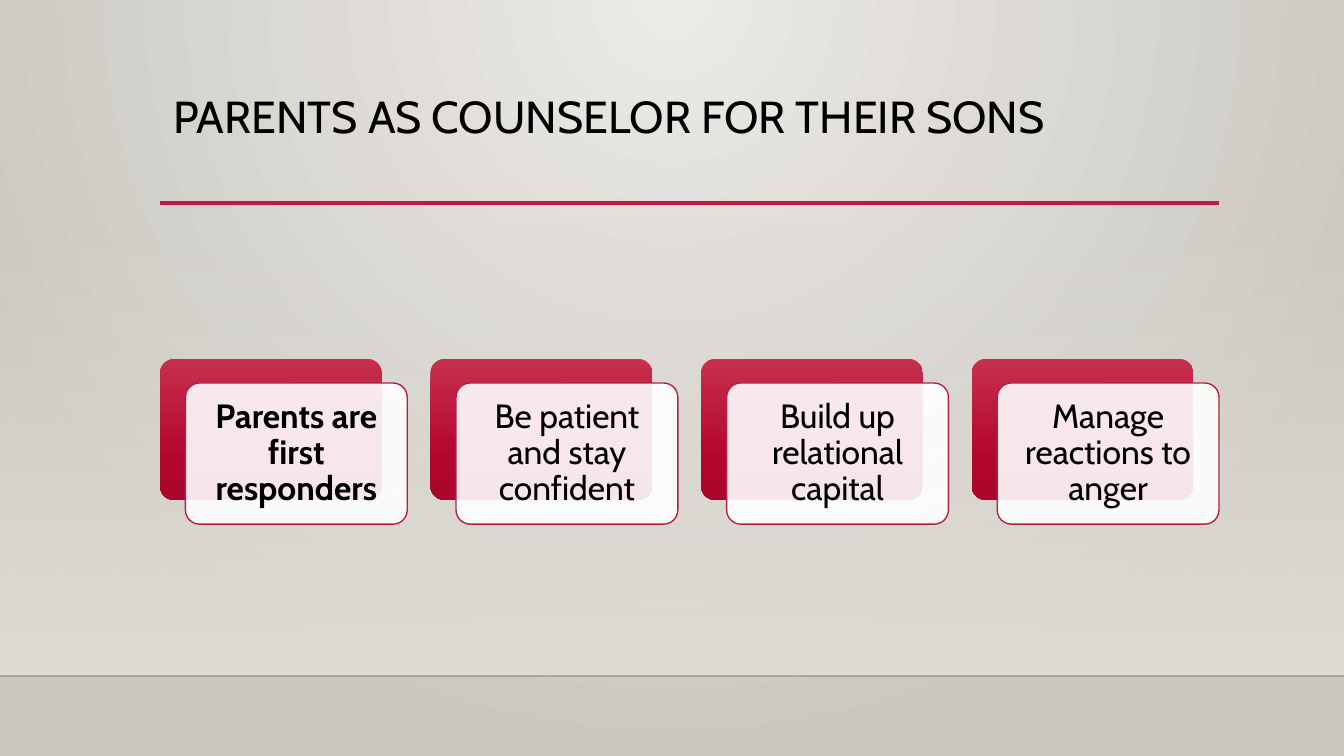
"""Build the slide on parents as counselors, with four overlapping cards."""
from dataclasses import dataclass

from lxml.etree import SubElement
from pptx import Presentation
from pptx.dml.color import RGBColor
from pptx.enum.shapes import MSO_CONNECTOR, MSO_SHAPE
from pptx.enum.text import MSO_ANCHOR, PP_ALIGN
from pptx.oxml.ns import qn
from pptx.util import Inches, Pt

FONT = "Cabin"
BLACK = RGBColor(0x00, 0x00, 0x00)
WHITE = RGBColor(0xFF, 0xFF, 0xFF)
CRIMSON = RGBColor(0xB7, 0x1E, 0x42)
CRIMSON_LIGHT = RGBColor(0xC7, 0x30, 0x4C)
CRIMSON_DEEP = RGBColor(0xB3, 0x06, 0x2F)
CRIMSON_DARK = RGBColor(0xAA, 0x06, 0x2C)
SAND = RGBColor(0xDF, 0xDB, 0xD5)
SAND_LIGHT = RGBColor(0xEC, 0xEA, 0xE7)
SAND_DARK = RGBColor(0xCA, 0xC7, 0xC1)

LEFT, CONTENT_WIDTH = 1.19, 7.88
WALL_TOP, FLOOR_TOP = 1.66, 5.03
CARD_TOP, CARD_WIDTH, CARD_HEIGHT = 2.67, 1.65, 1.05
SHIFT_RIGHT, SHIFT_DOWN = 0.19, 0.18


@dataclass(frozen=True)
class Stop:
    percent: int
    color: RGBColor
    alpha: int = 100


@dataclass(frozen=True)
class Card:
    message: str
    bold: bool = False


CRIMSON_STOPS = [Stop(0, CRIMSON_LIGHT), Stop(69, CRIMSON_DEEP), Stop(100, CRIMSON_DARK)]
CARDS = [
    Card("Parents are first responders", bold=True),
    Card("Be patient and stay confident"),
    Card("Build up relational capital"),
    Card("Manage reactions to anger"),
]
CARD_STEP = (CONTENT_WIDTH - CARD_WIDTH - SHIFT_RIGHT) / (len(CARDS) - 1)


def set_alpha(color_element, percent: int) -> None:
    SubElement(color_element, qn("a:alpha"), val=str(percent * 1000))


def fill_gradient(fill, element, stops: list[Stop], circular: bool = False) -> None:
    fill.gradient()
    gradient = next(element.iter(qn("a:gradFill")))
    for child in list(gradient):
        gradient.remove(child)
    stop_list = SubElement(gradient, qn("a:gsLst"))
    for stop in stops:
        entry = SubElement(stop_list, qn("a:gs"), pos=str(stop.percent * 1000))
        color = SubElement(entry, qn("a:srgbClr"), val=str(stop.color))
        if stop.alpha < 100:
            set_alpha(color, stop.alpha)
    if circular:
        center = SubElement(gradient, qn("a:path"), path="circle")
        SubElement(center, qn("a:fillToRect"), l="43000", t="0", r="43000", b="100000")
    else:
        SubElement(gradient, qn("a:lin"), ang="5400000", scaled="0")


def add_rule(slide, left: float, top: float, width: float, color: RGBColor,
             weight: float, alpha: int = 100) -> None:
    rule = slide.shapes.add_connector(
        MSO_CONNECTOR.STRAIGHT, Inches(left), Inches(top), Inches(left + width), Inches(top))
    rule.line.color.rgb = color
    rule.line.width = Pt(weight)
    if alpha < 100:
        set_alpha(next(rule.element.iter(qn("a:srgbClr"))), alpha)
    SubElement(rule.element.spPr, qn("a:effectLst"))


def add_panel(slide, kind: MSO_SHAPE, left: float, top: float, width: float, height: float):
    panel = slide.shapes.add_shape(
        kind, Inches(left), Inches(top), Inches(width), Inches(height))
    panel.shadow.inherit = False
    panel.line.fill.background()
    if kind == MSO_SHAPE.ROUNDED_RECTANGLE:
        panel.adjustments[0] = 0.1
    return panel


def write(frame, wording: str, size: int, align: PP_ALIGN, bold: bool = False) -> None:
    frame.word_wrap = True
    frame.text = wording
    paragraph = frame.paragraphs[0]
    paragraph.alignment = align
    paragraph.line_spacing = 0.9
    font = paragraph.runs[0].font
    font.name, font.size, font.bold = FONT, Pt(size), bold
    font.color.rgb = BLACK


def add_card(slide, card: Card, left: float) -> None:
    backing = add_panel(slide, MSO_SHAPE.ROUNDED_RECTANGLE,
                        left, CARD_TOP, CARD_WIDTH, CARD_HEIGHT)
    fill_gradient(backing.fill, backing.element, CRIMSON_STOPS)
    front = add_panel(slide, MSO_SHAPE.ROUNDED_RECTANGLE, left + SHIFT_RIGHT,
                      CARD_TOP + SHIFT_DOWN, CARD_WIDTH, CARD_HEIGHT)
    front.fill.solid()
    front.fill.fore_color.rgb = WHITE
    set_alpha(next(front.element.iter(qn("a:srgbClr"))), 90)
    front.line.color.rgb = CRIMSON
    front.line.width = Pt(0.75)
    frame = front.text_frame
    frame.margin_left = frame.margin_right = Inches(0.07)
    frame.margin_top = frame.margin_bottom = Inches(0.07)
    frame.vertical_anchor = MSO_ANCHOR.MIDDLE
    write(frame, card.message, 18, PP_ALIGN.CENTER, card.bold)


def main() -> None:
    presentation = Presentation()
    presentation.slide_width = Inches(10)
    presentation.slide_height = Inches(10) * 9 // 16
    slide = presentation.slides.add_slide(presentation.slide_layouts[6])
    fill_gradient(slide.background.fill, slide.element,
                  [Stop(0, SAND_LIGHT), Stop(100, SAND_DARK)], circular=True)

    wall = add_panel(slide, MSO_SHAPE.RECTANGLE, 0, WALL_TOP, 10, FLOOR_TOP - WALL_TOP)
    fill_gradient(wall.fill, wall.element, [Stop(0, SAND, alpha=0), Stop(100, SAND)])
    add_rule(slide, 0, FLOOR_TOP, 10, BLACK, 1, alpha=20)
    add_rule(slide, LEFT, 1.51, CONTENT_WIDTH, CRIMSON, 2.5)

    title = slide.shapes.add_textbox(
        Inches(LEFT), Inches(0.66), Inches(CONTENT_WIDTH), Inches(0.86))
    write(title.text_frame, "PARENTS AS COUNSELOR FOR THEIR SONS", 24, PP_ALIGN.LEFT)

    for index, card in enumerate(CARDS):
        add_card(slide, card, LEFT + index * CARD_STEP)
    presentation.save("out.pptx")


if __name__ == "__main__":
    main()
